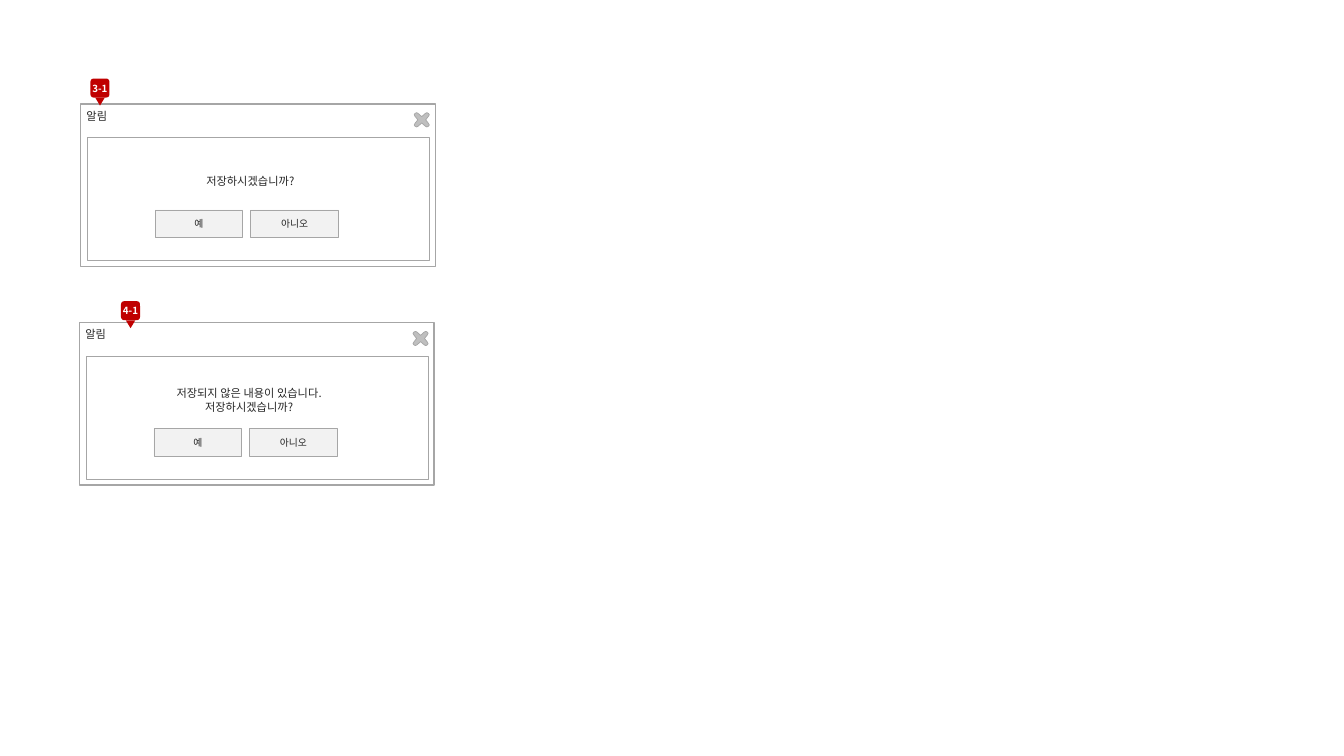
from lxml.etree import SubElement
from pptx import Presentation
from pptx.dml.color import RGBColor
from pptx.enum.shapes import MSO_SHAPE
from pptx.enum.text import MSO_ANCHOR, PP_ALIGN
from pptx.oxml.ns import qn
from pptx.util import Cm, Pt

# Content: lengths in cm
FONT = "Noto Sans CJK KR"
COLORS = {"white": "FFFFFF", "border": "A6A6A6", "button": "F2F2F2",
          "cross": "BFBFBF", "text": "262626", "badge": "C00000"}
TITLE = "알림"
BUTTONS = ["아니오", "예"]
DIALOGS = [
    {"origin": (2.0, 8.13), "badge": (3.05, 7.59), "number": "4-1",
     "message": ["저장되지 않은 내용이 있습니다.", "저장하시겠습니까?"]},
    {"origin": (2.03, 2.62), "badge": (2.28, 1.98), "number": "3-1",
     "message": ["저장하시겠습니까?"]},
]
BUTTON_LEFT, BUTTON_STEP = 1.88, 2.41
CROSS_CENTER = (8.6, 0.4)
CROSS_ARM = [(0, 0.08), (0.09, 0.16), (0.13, 0.18), (0.17, 0.16),
             (0.19, 0.13), (0.17, 0.09), (0.1, 0)]
SMALL_INSETS = (0.15, 0.08)
BADGE_INSETS = (0.13, 0.13)
BODY = {"size": Pt(8), "bold": False}
LABEL = {"size": Pt(7), "bold": False}
NUMBER = {"size": Pt(7), "bold": True}


def color(name):
    return RGBColor.from_string(COLORS[name])


def paint(shape, fill, line_width=None):
    shape.shadow.inherit = False
    shape.fill.solid()
    shape.fill.fore_color.rgb = color(fill)
    if line_width is None:
        shape.line.fill.background()
    else:
        shape.line.color.rgb = color("border")
        shape.line.width = Pt(line_width)


def add_box(shapes, kind, left, top, width, height, fill, line_width=None):
    shape = shapes.add_shape(kind, Cm(left), Cm(top), Cm(width), Cm(height))
    paint(shape, fill, line_width)
    return shape


def write(shape, lines, font_format, text_color="text", align=PP_ALIGN.CENTER,
          anchor=MSO_ANCHOR.MIDDLE, wrap=True, insets=None):
    frame = shape.text_frame
    settings = {"word_wrap": wrap, "vertical_anchor": anchor}
    if insets:
        across, down = map(Cm, insets)
        settings.update(margin_left=across, margin_right=across,
                        margin_top=down, margin_bottom=down)
    for name, value in settings.items():
        setattr(frame, name, value)
    for index, line in enumerate(lines):
        paragraph = frame.add_paragraph() if index else frame.paragraphs[0]
        paragraph.alignment = align
        run = paragraph.add_run()
        run.text = line
        for name, value in {"name": FONT, **font_format}.items():
            setattr(run.font, name, value)
        run.font.color.rgb = color(text_color)
        # Korean letters take the East Asian typeface
        SubElement(run.font._element, qn("a:ea"), typeface=FONT)


def add_text(shapes, left, top, width, height, lines, font_format, **options):
    text_box = shapes.add_textbox(Cm(left), Cm(top), Cm(width), Cm(height))
    write(text_box, lines, font_format, **options)


def add_cross(shapes, center_x, center_y):
    # One arm, mirrored into the four quadrants
    points = []
    for sign_x, sign_y in [(1, -1), (1, 1), (-1, 1), (-1, -1)]:
        arm = CROSS_ARM if sign_x * sign_y < 0 else CROSS_ARM[::-1]
        points += [(Cm(center_x + sign_x * x), Cm(center_y + sign_y * y))
                   for x, y in arm[:-1]]
        points.append((Cm(center_x + sign_x * arm[-1][0]),
                       Cm(center_y + sign_y * arm[-1][1])))
    builder = shapes.build_freeform(*points[0])
    builder.add_line_segments(points[1:], close=True)
    paint(builder.convert_to_shape(), "cross", 0.5)


def add_badge(shapes, left, top, number):
    group = shapes.add_group_shape().shapes
    pointer = add_box(group, MSO_SHAPE.ISOSCELES_TRIANGLE,
                      left + 0.12, top + 0.48, 0.24, 0.2, "badge")
    pointer.rotation = 180
    add_box(group, MSO_SHAPE.ROUNDED_RECTANGLE, left, top, 0.48, 0.48, "badge")
    add_text(group, left - 0.1, top - 0.03, 0.68, 0.56, [number], NUMBER,
             text_color="white", anchor=MSO_ANCHOR.TOP, insets=BADGE_INSETS)


def add_dialog(shapes, dialog):
    left, top = dialog["origin"]
    # Frame and inner panel
    add_box(shapes, MSO_SHAPE.RECTANGLE, left, top, 8.94, 4.09, "white", 1)
    add_box(shapes, MSO_SHAPE.RECTANGLE, left + 0.18, top + 0.85, 8.61, 3.1,
            "white", 0.75)
    # Buttons, right to left
    for index, label in enumerate(BUTTONS):
        column = len(BUTTONS) - 1 - index
        button = add_box(shapes, MSO_SHAPE.ROUNDED_RECTANGLE,
                         left + BUTTON_LEFT + column * BUTTON_STEP, top + 2.67,
                         2.21, 0.69, "button", 0.5)
        button.adjustments[0] = 0
        write(button, [label], LABEL, wrap=False)
    # Close mark, message and title
    add_cross(shapes, left + CROSS_CENTER[0], top + CROSS_CENTER[1])
    add_text(shapes, left + 0.28, top + 1.25, 8, 1.4, dialog["message"], BODY,
             insets=SMALL_INSETS)
    add_text(shapes, left, top + 0.05, 1.19, 0.53, [TITLE], BODY,
             align=PP_ALIGN.LEFT, anchor=MSO_ANCHOR.TOP, insets=SMALL_INSETS)
    add_badge(shapes, *dialog["badge"], dialog["number"])


def main():
    presentation = Presentation()
    presentation.slide_width, presentation.slide_height = Cm(33.87), Cm(19.05)
    slide = presentation.slides.add_slide(presentation.slide_layouts[6])
    for dialog in DIALOGS:
        add_dialog(slide.shapes, dialog)
    presentation.save("out.pptx")


if __name__ == "__main__":
    main()
